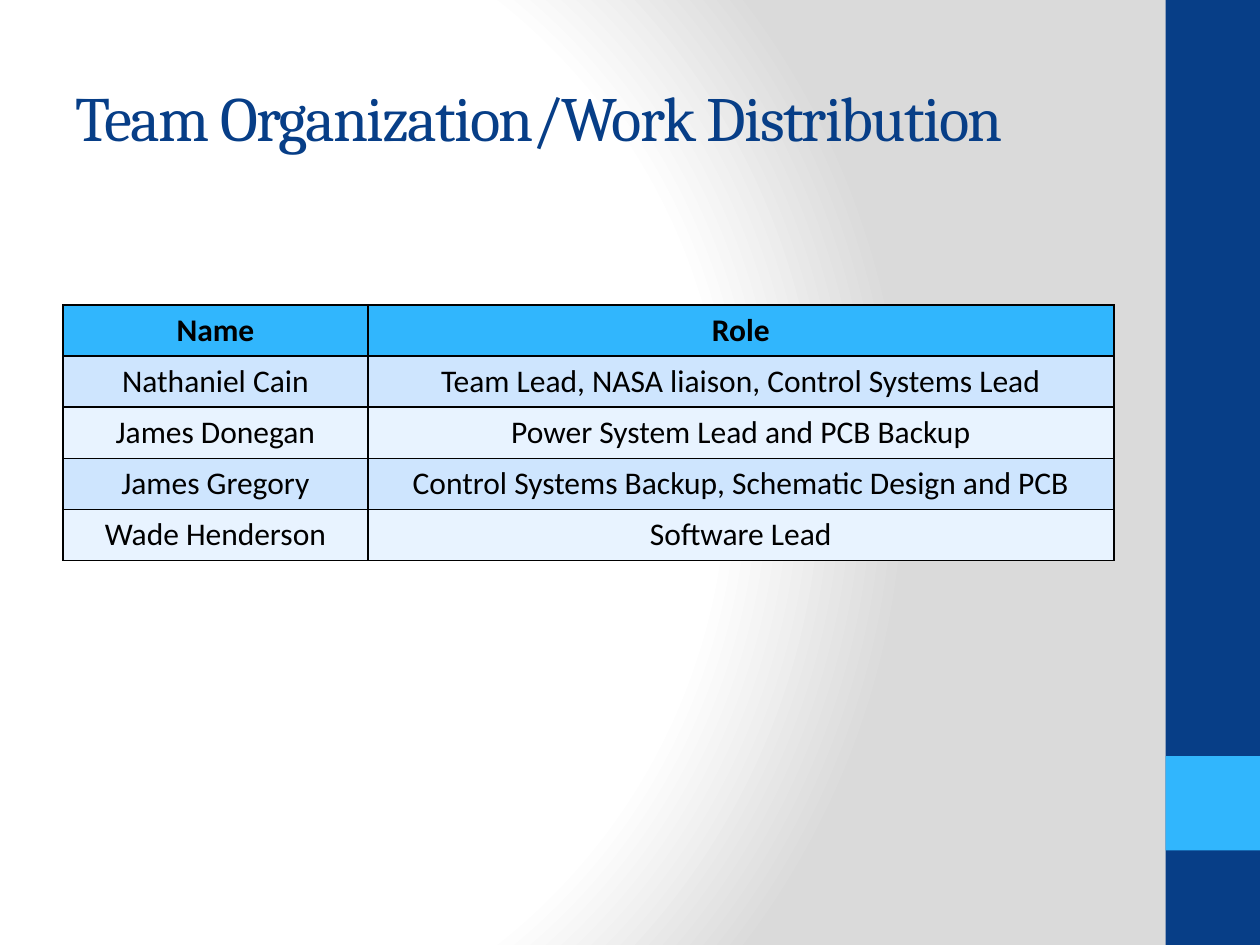
from lxml import etree
from pptx import Presentation
from pptx.dml.color import RGBColor
from pptx.enum import shapes, text
from pptx.oxml import parse_xml
from pptx.oxml.ns import nsdecls, qn
from pptx.util import Inches, Pt

NAVY, SKY, BLACK = "073E87", "31B6FD", "000000"
BANDS = ["CEE5FE", "E8F3FF"]


def color(hex_value):
    return RGBColor.from_string(hex_value)


def add_span(para, words, font, size, hex_value, bold=False):
    span = para.add_run()
    span.text = words
    span.font.name = font
    span.font.size = Pt(size)
    span.font.bold = bold
    span.font.color.rgb = color(hex_value)
    return span


deck = Presentation()
deck.slide_width, deck.slide_height = Inches(10), Inches(7.5)
page = deck.slides.add_slide(deck.slide_layouts[5])

# Background: circular gradient from white to grey
fill = page.background.fill
fill.gradient()
old_gradient = page.background._cSld.find(".//" + qn("a:gradFill"))
stops = "".join(
    f'<a:gs pos="{percent * 1000}"><a:srgbClr val="{shade}"/></a:gs>'
    for percent, shade in [(0, "FFFFFF"), (75, "FFFFFF"), (100, "DADADA")]
)
gradient = parse_xml(
    f'<a:gradFill rotWithShape="1" {nsdecls("a")}><a:gsLst>{stops}</a:gsLst>'
    '<a:path path="circle">'
    '<a:fillToRect l="20000" t="50000" r="100000" b="50000"/>'
    "</a:path></a:gradFill>"
)
old_gradient.getparent().replace(old_gradient, gradient)

# Side bar with its accent square
for top, height, shade in [(0, 7.5, NAVY), (6, 0.75, SKY)]:
    bar = page.shapes.add_shape(
        shapes.MSO_SHAPE.RECTANGLE,
        Inches(9.25), Inches(top), Inches(0.75), Inches(height),
    )
    bar.shadow.inherit = False
    bar.fill.solid()
    bar.fill.fore_color.rgb = color(shade)
    bar.line.fill.background()

# Title
title = page.shapes.title
title.left, title.top = Inches(0.5), Inches(0.3)
title.width, title.height = Inches(8.33), Inches(1.25)
title.text_frame.vertical_anchor = text.MSO_ANCHOR.MIDDLE
para = title.text_frame.paragraphs[0]
para.alignment = text.PP_ALIGN.LEFT
span = add_span(para, "Team Organization/Work Distribution", "Cambria", 36, NAVY)
span.font._element.set("spc", "-100")

# Team table
team = [
    ("Name", "Role"),
    ("Nathaniel Cain", "Team Lead, NASA liaison, Control Systems Lead"),
    ("James Donegan", "Power System Lead and PCB Backup"),
    ("James Gregory", "Control Systems Backup, Schematic Design and PCB"),
    ("Wade Henderson", "Software Lead"),
]
table = page.shapes.add_table(
    len(team), 2, Inches(0.5), Inches(2.42), Inches(8.34), Inches(2.03)
).table
for column, width in zip(table.columns, [2.42, 5.92]):
    column.width = Inches(width)

for row_index, entries in enumerate(team):
    is_header = row_index == 0
    shade = SKY if is_header else BANDS[(row_index - 1) % 2]
    for column_index, words in enumerate(entries):
        cell = table.cell(row_index, column_index)
        properties = cell._tc.get_or_add_tcPr()
        for side in ["lnL", "lnR", "lnT", "lnB"]:
            border = etree.SubElement(properties, qn(f"a:{side}"), w=str(Pt(1)))
            line_fill = etree.SubElement(border, qn("a:solidFill"))
            etree.SubElement(line_fill, qn("a:srgbClr"), val=BLACK)
        cell.fill.solid()
        cell.fill.fore_color.rgb = color(shade)
        para = cell.text_frame.paragraphs[0]
        para.alignment = text.PP_ALIGN.CENTER
        add_span(para, words, "Calibri", 18, BLACK, bold=is_header)

deck.save("out.pptx")
